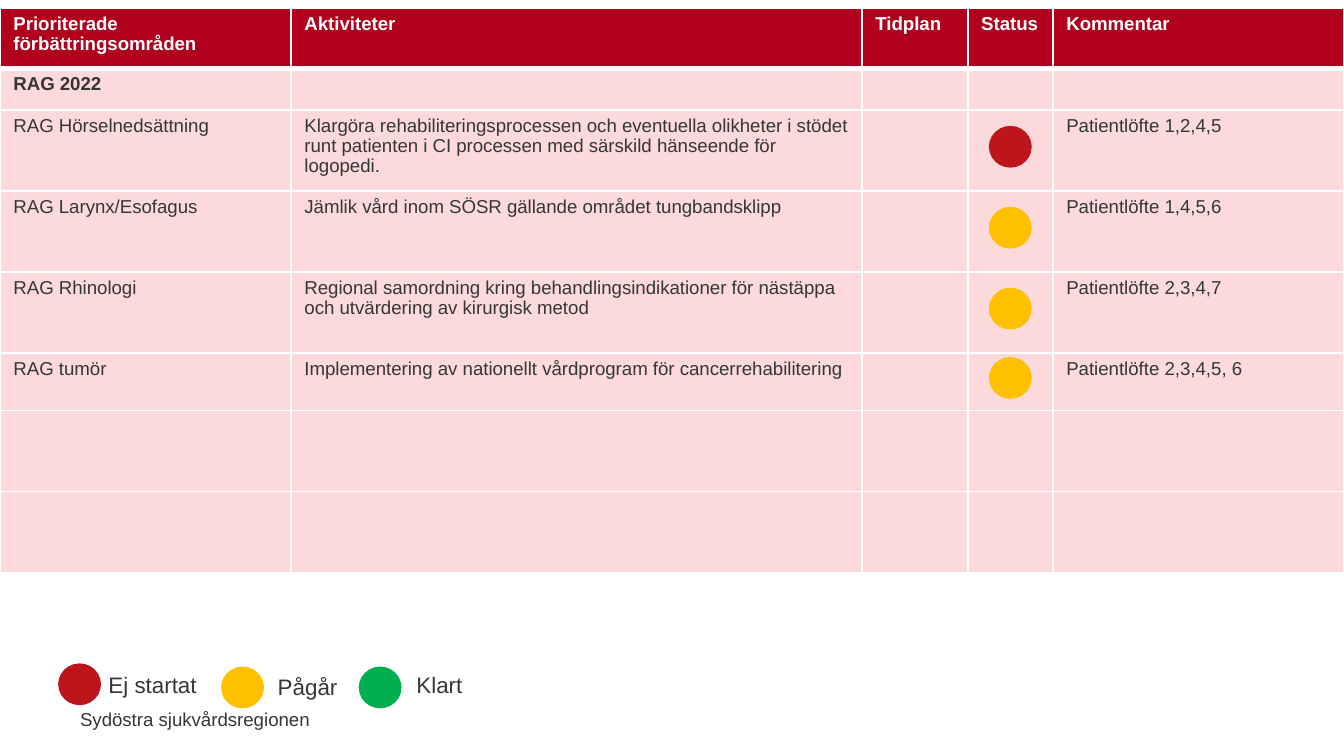
from dataclasses import dataclass

from lxml import etree
from pptx import Presentation
from pptx.dml.color import RGBColor
from pptx.enum.shapes import MSO_SHAPE
from pptx.enum.text import MSO_AUTO_SIZE, PP_ALIGN
from pptx.oxml.ns import qn
from pptx.util import Cm, Pt

OVAL = MSO_SHAPE.OVAL
GROW = MSO_AUTO_SIZE.SHAPE_TO_FIT_TEXT
LEFT, RIGHT = PP_ALIGN.LEFT, PP_ALIGN.RIGHT


@dataclass(frozen=True)
class Theme:
    """Hold the colours and type sizes of the slide."""
    font: str = "Arial"
    small: int = 10
    large: int = 12
    ink: str = "363636"
    white: str = "FFFFFF"
    head: str = "B1001E"
    body: str = "FCD9DA"
    red: str = "BC151C"
    amber: str = "FFC000"
    green: str = "00B050"


THEME = Theme()
TOP = 0.15
COLS = (5.5, 10.79, 2, 1.61, 5.5)
ROWS = (1.14, 0.79, 1.53, 1.53, 1.53, 1.09, 1.53, 1.53)
DOT = (0.81, 0.79)
LIFT = 0.07
STATUS = 3
CELLS = (
    ("Prioriterade förbättringsområden", "Aktiviteter", "Tidplan", "Status",
     "Kommentar"),
    ("RAG 2022", "", "", "", ""),
    ("RAG Hörselnedsättning",
     "Klargöra rehabiliteringsprocessen och eventuella olikheter i stödet "
     "runt patienten i CI processen med särskild hänseende för logopedi.",
     "", "", "Patientlöfte 1,2,4,5"),
    ("RAG Larynx/Esofagus",
     "Jämlik vård inom SÖSR gällande området tungbandsklipp",
     "", "", "Patientlöfte 1,4,5,6"),
    ("RAG Rhinologi",
     "Regional samordning kring behandlingsindikationer för nästäppa och "
     "utvärdering av kirurgisk metod",
     "", "", "Patientlöfte 2,3,4,7"),
    ("RAG tumör",
     "Implementering av nationellt vårdprogram för cancerrehabilitering",
     "", "", "Patientlöfte 2,3,4,5, 6"),
    ("",) * 5,
    ("",) * 5,
)
MARKS = {2: THEME.red, 3: THEME.amber, 4: THEME.amber, 5: THEME.amber}
LEGEND = (
    (THEME.red, 1.1, 12.54, "Ej startat", 1.8, 12.57, 2.2, False),
    (THEME.amber, 4.18, 12.6, "Pågår", 5, 12.6, 3.8, True),
    (THEME.green, 6.78, 12.6, "Klart", 7.62, 12.57, 2.77, True),
)


def style(para, size, color, bold=False):
    """Format the font of a paragraph."""
    form = {"name": THEME.font, "size": Pt(size), "bold": bold}
    for key, value in form.items():
        setattr(para.font, key, value)
    para.font.color.rgb = RGBColor.from_string(color)


def label(slide, text, box, size, wrap=True, align=LEFT):
    """Add a text box with one line of text."""
    frame = slide.shapes.add_textbox(*map(Cm, box)).text_frame
    form = {"text": text, "word_wrap": wrap, "auto_size": GROW}
    for key, value in form.items():
        setattr(frame, key, value)
    para = frame.paragraphs[0]
    para.alignment = align
    style(para, size, THEME.ink)


def dot(slide, left, top, color):
    """Add a round status mark."""
    mark = slide.shapes.add_shape(OVAL, *map(Cm, (left, top, *DOT)))
    mark.shadow.inherit = False
    mark.fill.solid()
    mark.fill.fore_color.rgb = RGBColor.from_string(color)
    mark.line.fill.background()


def border(cell, widths):
    """Draw white lines around a cell."""
    props = cell._tc.get_or_add_tcPr()
    for side, width in widths.items():
        line = etree.SubElement(props, qn(f"a:ln{side}"), w=str(Pt(width)))
        fill = etree.SubElement(line, qn("a:solidFill"))
        etree.SubElement(fill, qn("a:srgbClr"), val=THEME.white)


def fill_cell(cell, text, row):
    """Write and format one table cell."""
    head = row == 0
    border(cell, {"L": 1, "R": 1, "T": 3 if row == 1 else 1,
                  "B": 3 if head else 1})
    cell.fill.solid()
    color = THEME.head if head else THEME.body
    cell.fill.fore_color.rgb = RGBColor.from_string(color)
    cell.text = text
    para = cell.text_frame.paragraphs[0]
    para.line_spacing = 0.95
    style(para, THEME.small, THEME.white if head else THEME.ink, row < 2)


def plan(slide):
    """Add the table of activities."""
    box = (0, TOP, sum(COLS), sum(ROWS))
    table = slide.shapes.add_table(
        len(ROWS), len(COLS), *map(Cm, box)).table
    for col, width in zip(table.columns, COLS):
        col.width = Cm(width)
    for num, (row, height) in enumerate(zip(table.rows, ROWS)):
        row.height = Cm(height)
        for cell, text in zip(row.cells, CELLS[num]):
            fill_cell(cell, text, num)


def marks(slide):
    """Place a mark in the status cell of each active row."""
    left = sum(COLS[:STATUS]) + (COLS[STATUS] - DOT[0]) / 2
    for row, color in MARKS.items():
        mid = TOP + sum(ROWS[:row]) + ROWS[row] / 2
        dot(slide, left, mid - DOT[1] / 2 - LIFT, color)


def legend(slide):
    """Explain the status colours."""
    for color, left, top, text, start, high, width, wrap in LEGEND:
        dot(slide, left, top, color)
        label(slide, text, (start, high, width, 0.77), THEME.large, wrap)


def main():
    """Build and save the slide."""
    deck = Presentation()
    deck.slide_width, deck.slide_height = Cm(25.4), Cm(14.29)
    slide = deck.slides.add_slide(deck.slide_layouts[6])
    label(slide, "Sydöstra sjukvårdsregionen", (1.22, 13.26, 4.88, 0.68),
          THEME.small, False, RIGHT)
    plan(slide)
    legend(slide)
    marks(slide)
    deck.save("out.pptx")


if __name__ == "__main__":
    main()
